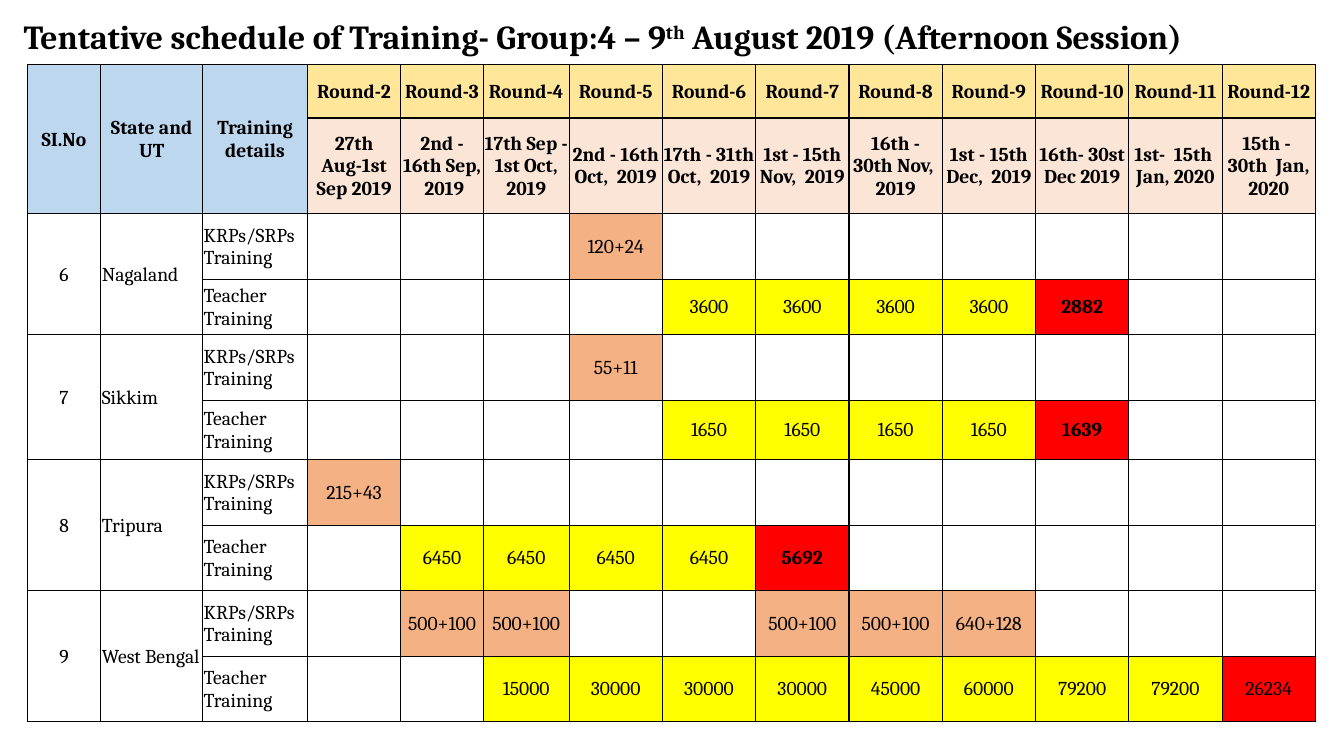
from dataclasses import dataclass

from lxml.etree import SubElement
from pptx import Presentation
from pptx.dml.color import RGBColor
from pptx.enum.text import MSO_ANCHOR, MSO_AUTO_SIZE, PP_ALIGN
from pptx.oxml.ns import qn
from pptx.util import Inches, Pt


@dataclass(frozen=True)
class Theme:
    font: str = "Cambria"
    title_size: int = 24
    cell_size: int = 14
    border_width: int = 1
    text: str = "000000"
    border: str = "000000"
    label_fill: str = "BDD7EE"
    round_fill: str = "FFE699"
    date_fill: str = "FBE5D6"
    resource_fill: str = "F4B183"
    teacher_fill: str = "FFFF00"
    final_fill: str = "FF0000"


THEME = Theme()
SLIDE_WIDTH, SLIDE_HEIGHT = 13.33, 7.5
TABLE_LEFT, TABLE_TOP, TABLE_WIDTH = 0.27, 0.64, 12.78
LABEL_WIDTHS = [0.73, 1.01, 1.04]
NARROW_ROUNDS = {1: 0.82, 2: 0.85}
ROW_HEIGHTS = [0.53, 0.95, 0.65, 0.55, 0.65, 0.59] + [0.65] * 4
FIRST_ROUND = 2

LABELS = ["SI.No", "State and UT", "Training details"]
DATES = [
    "27th Aug-1st Sep 2019",
    "2nd - 16th Sep,  2019",
    "17th Sep - 1st Oct, 2019",
    "2nd - 16th Oct,  2019",
    "17th - 31th Oct,  2019",
    "1st - 15th Nov,  2019",
    "16th - 30th Nov,  2019",
    "1st - 15th Dec,  2019",
    "16th- 30st Dec 2019",
    "1st-  15th  Jan, 2020",
    "15th -  30th  Jan, 2020",
]
FIRST_STATE_NUMBER = 6
STATES = [
    ("Nagaland", {5: "120+24"}, 6, ["3600"] * 4 + ["2882"]),
    ("Sikkim", {5: "55+11"}, 6, ["1650"] * 4 + ["1639"]),
    ("Tripura", {2: "215+43"}, 3, ["6450"] * 4 + ["5692"]),
    ("West Bengal",
     {3: "500+100", 4: "500+100", 7: "500+100", 8: "500+100", 9: "640+128"},
     4, ["15000", "30000", "30000", "30000", "45000", "60000", "79200", "79200", "26234"]),
]
PLAIN_FINALS = {"West Bengal"}


def format_run(run, size, bold):
    run.font.name = THEME.font
    run.font.size = Pt(size)
    run.font.bold = bold
    run.font.color.rgb = RGBColor.from_string(THEME.text)


def add_title(slide):
    title = slide.shapes.title
    title.left, title.top = Inches(0.01 * SLIDE_WIDTH), Inches(0.05)
    title.width, title.height = Inches(0.97 * SLIDE_WIDTH), Inches(0.09 * SLIDE_HEIGHT)
    frame = title.text_frame
    frame.auto_size = MSO_AUTO_SIZE.NONE
    frame.word_wrap = True
    frame.vertical_anchor = MSO_ANCHOR.MIDDLE
    paragraph = frame.paragraphs[0]
    paragraph.alignment = PP_ALIGN.LEFT
    paragraph.line_spacing = 0.9
    parts = ["Tentative schedule of Training- Group:4 – 9", "th", " August 2019 (Afternoon Session)"]
    for text in parts:
        run = paragraph.add_run()
        run.text = text
        format_run(run, THEME.title_size, True)
    paragraph.runs[1].font._element.set("baseline", "30000")


def add_borders(cell):
    properties = cell._tc.get_or_add_tcPr()
    for side in ("lnL", "lnR", "lnT", "lnB"):
        line = SubElement(properties, qn(f"a:{side}"), w=str(Pt(THEME.border_width)))
        fill = SubElement(line, qn("a:solidFill"))
        SubElement(fill, qn("a:srgbClr"), val=THEME.border)


def add_grid(slide):
    column_count = len(LABELS) + len(DATES)
    frame = slide.shapes.add_table(
        len(ROW_HEIGHTS), column_count, Inches(TABLE_LEFT), Inches(TABLE_TOP),
        Inches(TABLE_WIDTH), Inches(sum(ROW_HEIGHTS)))
    table = frame.table
    table.first_row = table.horz_banding = False
    used_width = sum(LABEL_WIDTHS) + sum(NARROW_ROUNDS.values())
    regular_width = (TABLE_WIDTH - used_width) / (len(DATES) - len(NARROW_ROUNDS))
    round_widths = [NARROW_ROUNDS.get(index, regular_width) for index in range(len(DATES))]
    for column, width in zip(table.columns, LABEL_WIDTHS + round_widths):
        column.width = Inches(width)
    for row, height in zip(table.rows, ROW_HEIGHTS):
        row.height = Inches(height)
    for cell in table.iter_cells():
        add_borders(cell)
        cell.fill.background()
    return table


def fill_cell(cell, text, fill=None, bold=False, alignment=PP_ALIGN.CENTER):
    cell.margin_left = cell.margin_right = cell.margin_top = Inches(0.01)
    cell.margin_bottom = 0
    cell.vertical_anchor = MSO_ANCHOR.MIDDLE
    cell.text_frame.text = text
    paragraph = cell.text_frame.paragraphs[0]
    paragraph.alignment = alignment
    format_run(paragraph.runs[0], THEME.cell_size, bold)
    if fill:
        cell.fill.solid()
        cell.fill.fore_color.rgb = RGBColor.from_string(fill)


def merge_down(table, row, column):
    table.cell(row, column).merge(table.cell(row + 1, column))


def round_column(number):
    return len(LABELS) + number - FIRST_ROUND


def add_header(table):
    for column, label in enumerate(LABELS):
        merge_down(table, 0, column)
        fill_cell(table.cell(0, column), label, THEME.label_fill, True)
    for number, dates in enumerate(DATES, FIRST_ROUND):
        column = round_column(number)
        fill_cell(table.cell(0, column), f"Round-{number}", THEME.round_fill, True)
        fill_cell(table.cell(1, column), dates, THEME.date_fill, True)


def add_state(table, index, state, resource_rounds, first_teacher_round, teachers):
    row = 2 + 2 * index
    merge_down(table, row, 0)
    merge_down(table, row, 1)
    fill_cell(table.cell(row, 0), str(FIRST_STATE_NUMBER + index))
    fill_cell(table.cell(row, 1), state, alignment=PP_ALIGN.LEFT)
    for offset, group in enumerate(["KRPs/SRPs", "Teacher"]):
        fill_cell(table.cell(row + offset, 2), f"{group} Training", alignment=PP_ALIGN.LEFT)
    for number, count in resource_rounds.items():
        fill_cell(table.cell(row, round_column(number)), count, THEME.resource_fill)
    last_round = first_teacher_round + len(teachers) - 1
    for number, count in enumerate(teachers, first_teacher_round):
        final = number == last_round
        fill = THEME.final_fill if final else THEME.teacher_fill
        bold = final and state not in PLAIN_FINALS
        fill_cell(table.cell(row + 1, round_column(number)), count, fill, bold)


def main():
    presentation = Presentation()
    presentation.slide_width = Inches(SLIDE_WIDTH)
    presentation.slide_height = Inches(SLIDE_HEIGHT)
    slide = presentation.slides.add_slide(presentation.slide_layouts[5])
    add_title(slide)
    table = add_grid(slide)
    add_header(table)
    for index, state in enumerate(STATES):
        add_state(table, index, *state)
    presentation.save("out.pptx")


if __name__ == "__main__":
    main()
